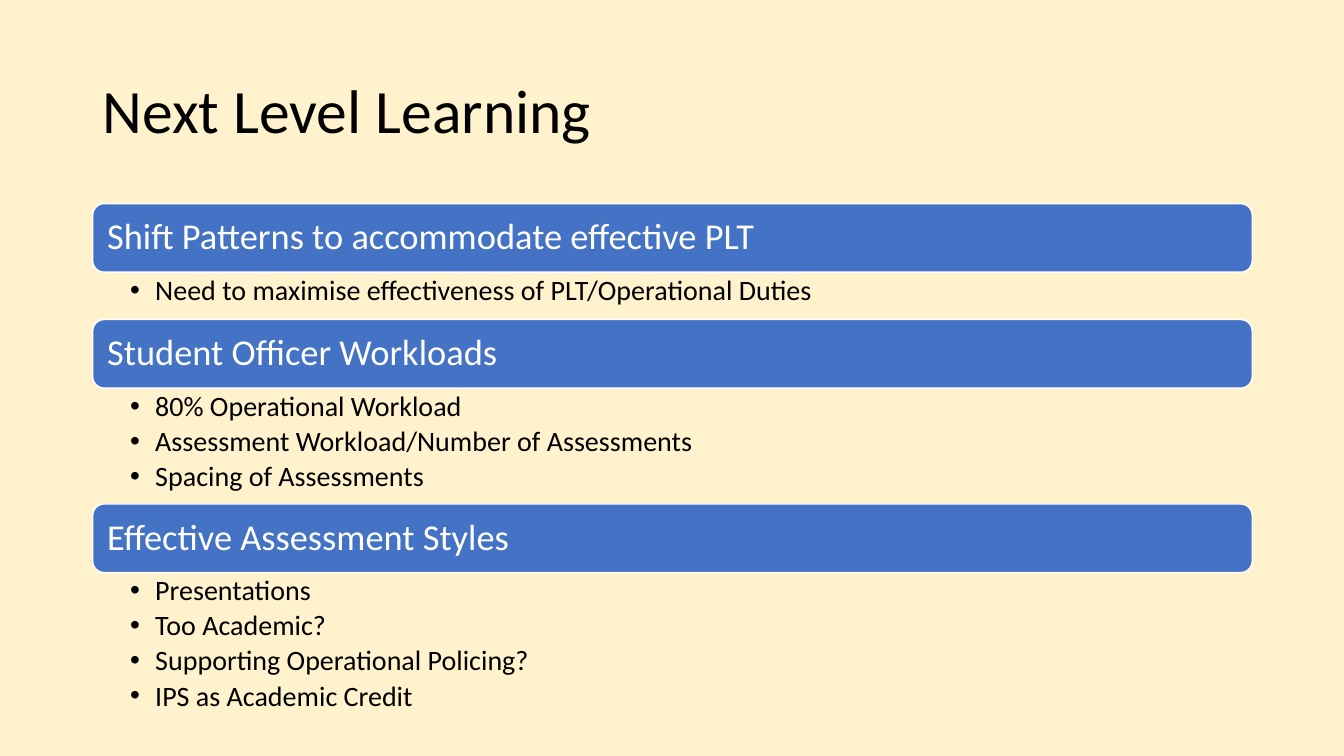
from lxml import etree
from pptx import Presentation, util as u
from pptx.dml.color import RGBColor
from pptx.enum import shapes, text
from pptx.oxml import ns

LEFT, WIDTH = 0.92, 11.5
BAR_HEIGHT = 0.68
SECTIONS = [
    ("Shift Patterns to accommodate effective PLT", 0.47,
     ["Need to maximise effectiveness of PLT/Operational Duties"]),
    ("Student Officer Workloads", 1.15,
     ["80% Operational Workload",
      "Assessment Workload/Number of Assessments",
      "Spacing of Assessments"]),
    ("Effective Assessment Styles", 1.5,
     ["Presentations", "Too Academic?",
      "Supporting Operational Policing?", "IPS as Academic Credit"]),
]


def paint(target, color):
    """Give a fill or a font one solid colour from a hex string."""
    if hasattr(target, "solid"):
        target.solid()
        target.fore_color.rgb = RGBColor.from_string(color)
    else:
        target.color.rgb = RGBColor.from_string(color)


def write(para, words, size, color):
    para.alignment = text.PP_ALIGN.LEFT
    para.line_spacing = 0.9
    span = para.add_run()
    span.text = words
    span.font.name = "Calibri"
    span.font.size = u.Pt(size)
    paint(span.font, color)


deck = Presentation()
deck.slide_width, deck.slide_height = u.Inches(13.33), u.Inches(7.5)
page = deck.slides.add_slide(deck.slide_layouts[6])
paint(page.background.fill, "FFF2CC")

title = page.shapes.add_textbox(
    u.Inches(LEFT), u.Inches(0.4), u.Inches(WIDTH), u.Inches(1.45)).text_frame
title.word_wrap = True
title.vertical_anchor = text.MSO_ANCHOR.MIDDLE
write(title.paragraphs[0], "Next Level Learning", 44, "000000")

top = 2.02
for heading, list_height, points in SECTIONS:
    bar = page.shapes.add_shape(
        shapes.MSO_SHAPE.ROUNDED_RECTANGLE,
        u.Inches(LEFT), u.Inches(top), u.Inches(WIDTH), u.Inches(BAR_HEIGHT))
    bar.shadow.inherit = False
    paint(bar.fill, "4472C4")
    paint(bar.line.fill, "FFFFFF")
    bar.line.width = u.Pt(1)
    frame = bar.text_frame
    frame.word_wrap = True
    frame.vertical_anchor = text.MSO_ANCHOR.MIDDLE
    frame.margin_left = frame.margin_right = u.Inches(0.11)
    write(frame.paragraphs[0], heading, 26, "FFFFFF")
    top += BAR_HEIGHT

    box = page.shapes.add_textbox(
        u.Inches(LEFT), u.Inches(top), u.Inches(WIDTH), u.Inches(list_height))
    frame = box.text_frame
    frame.word_wrap = True
    frame.margin_left, frame.margin_right = u.Inches(0.37), u.Inches(0.2)
    frame.margin_top = frame.margin_bottom = u.Inches(0.04)
    for index, point in enumerate(points):
        para = frame.add_paragraph() if index else frame.paragraphs[0]
        para.level = 1
        write(para, point, 20, "000000")
        para.space_after = u.Pt(3.5)
        props = para._p.get_or_add_pPr()
        props.set("marL", str(u.Inches(0.25)))
        props.set("indent", str(u.Inches(-0.25)))
        etree.SubElement(props, ns.qn("a:buFont"), typeface="Arial")
        etree.SubElement(props, ns.qn("a:buChar"), char="•")
    top += list_height

deck.save("out.pptx")
